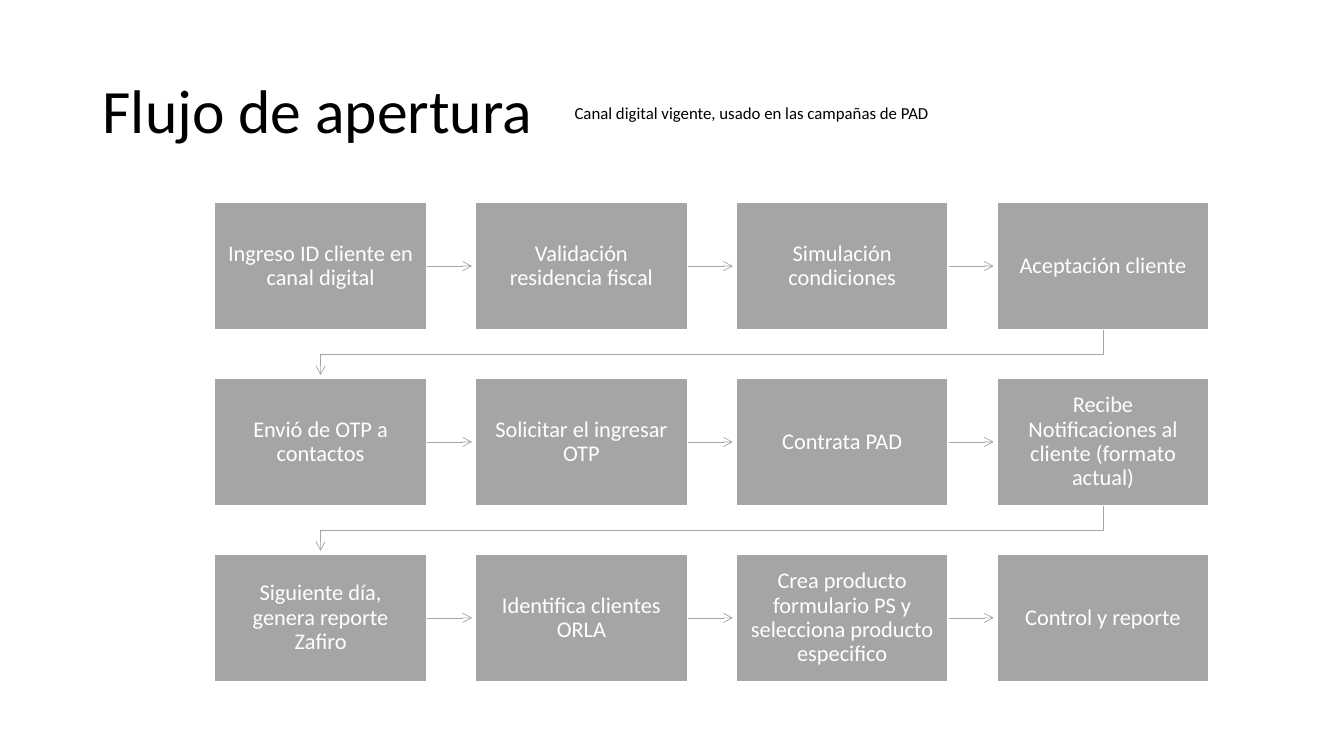
import dataclasses

import lxml.etree
import pptx
import pptx.dml.color
import pptx.enum.shapes
import pptx.enum.text
import pptx.oxml.ns
import pptx.util


@dataclasses.dataclass(frozen=True)
class Theme:
    font: str = "Calibri"
    ink: str = "000000"
    paper: str = "FFFFFF"
    grey: str = "A5A5A5"
    title: int = 44
    step: int = 16
    note: int = 12
    border: float = 1
    arrow: float = 0.5


THEME = Theme()
WIDTH, HEIGHT = 13.33, 7.5
inch = pptx.util.Inches

STEPS = [
    ["Ingreso ID cliente en canal digital", "Validación residencia fiscal",
     "Simulación condiciones", "Aceptación cliente"],
    ["Envió de OTP a contactos", "Solicitar el ingresar OTP",
     "Contrata PAD", "Recibe Notificaciones al cliente (formato actual)"],
    ["Siguiente día, genera reporte Zafiro", "Identifica clientes ORLA",
     "Crea producto formulario PS y selecciona producto especifico",
     "Control y reporte"],
]


def colour(code):
    return pptx.dml.color.RGBColor.from_string(code)


def write(shape, text, size, ink, spacing=1.0, align=pptx.enum.text.PP_ALIGN.LEFT,
          anchor=pptx.enum.text.MSO_ANCHOR.MIDDLE):
    frame = shape.text_frame
    frame.word_wrap = True
    frame.vertical_anchor = anchor
    para = frame.paragraphs[0]
    para.alignment = align
    para.line_spacing = spacing
    span = para.add_run()
    span.text = text
    span.font.name = THEME.font
    span.font.size = pptx.util.Pt(size)
    span.font.color.rgb = colour(ink)
    return frame


def style_arrow(shape):
    """Thin grey line with an open head at its end."""
    shape.line.color.rgb = colour(THEME.grey)
    shape.line.width = pptx.util.Pt(THEME.arrow)
    qn = pptx.oxml.ns.qn
    line = shape.line._get_or_add_ln()
    lxml.etree.SubElement(line, qn("a:tailEnd"), type="arrow")


def add_step_arrow(page, x, y, length):
    straight = pptx.enum.shapes.MSO_CONNECTOR.STRAIGHT
    arrow = page.shapes.add_connector(straight, inch(x), inch(y), inch(x + length), inch(y))
    style_arrow(arrow)
    lxml.etree.SubElement(arrow._element.spPr, pptx.oxml.ns.qn("a:effectLst"))


def add_return_arrow(page, start_x, end_x, top, gap):
    """Path from the last step of a row down to the first of the next."""
    bend, end = top + gap / 2, top + gap * 0.93
    builder = page.shapes.build_freeform(inch(start_x), inch(top))
    corners = [(start_x, bend), (end_x, bend), (end_x, end)]
    builder.add_line_segments([(inch(x), inch(y)) for x, y in corners], close=False)
    arrow = builder.convert_to_shape()
    arrow.shadow.inherit = False
    arrow.fill.background()
    style_arrow(arrow)


def add_step(page, text, left, top, width, height):
    box = page.shapes.add_shape(pptx.enum.shapes.MSO_SHAPE.RECTANGLE,
                                inch(left), inch(top), inch(width), inch(height))
    box.shadow.inherit = False
    box.fill.solid()
    box.fill.fore_color.rgb = colour(THEME.grey)
    box.line.color.rgb = colour(THEME.paper)
    box.line.width = pptx.util.Pt(THEME.border)
    frame = write(box, text, THEME.step, THEME.paper, 0.9, pptx.enum.text.PP_ALIGN.CENTER)
    frame.margin_left = frame.margin_right = inch(0.12)
    frame.margin_top = frame.margin_bottom = inch(0.12)


def add_heading(page, left, top, width, height):
    title = page.shapes.add_textbox(inch(left), inch(top), inch(width), inch(height))
    write(title, "Flujo de apertura", THEME.title, THEME.ink, 0.9)
    # Note beside the title
    note = page.shapes.add_textbox(inch(left + 4.68), inch(top + 0.57), inch(5.48), inch(0.3))
    write(note, "Canal digital vigente, usado en las campañas de PAD", THEME.note, THEME.ink,
          anchor=pptx.enum.text.MSO_ANCHOR.TOP)


def add_flow(page, left, top, width, height):
    columns, rows = len(STEPS[0]), len(STEPS)
    step_width, step_height = 2.1, 1.26
    pitch_x = (width - step_width) / (columns - 1)
    pitch_y = (height - step_height) / (rows - 1)
    gap_x, gap_y = pitch_x - step_width, pitch_y - step_height
    first_x = left + step_width / 2
    last_x = left + width - step_width / 2
    for row, texts in enumerate(STEPS):
        y = top + row * pitch_y
        # Arrows lie behind the steps
        for column in range(columns - 1):
            add_step_arrow(page, left + column * pitch_x + step_width,
                           y + step_height / 2, gap_x * 0.93)
        if row < rows - 1:
            add_return_arrow(page, last_x, first_x, y + step_height, gap_y)
        for column, text in enumerate(texts):
            add_step(page, text, left + column * pitch_x, y, step_width, step_height)


def main():
    deck = pptx.Presentation()
    deck.slide_width, deck.slide_height = inch(WIDTH), inch(HEIGHT)
    page = deck.slides.add_slide(deck.slide_layouts[6])
    add_heading(page, 0.92, 0.4, 11.5, 1.45)
    add_flow(page, 2.13, 2.01, 9.86, 4.75)
    deck.save("out.pptx")


if __name__ == "__main__":
    main()
